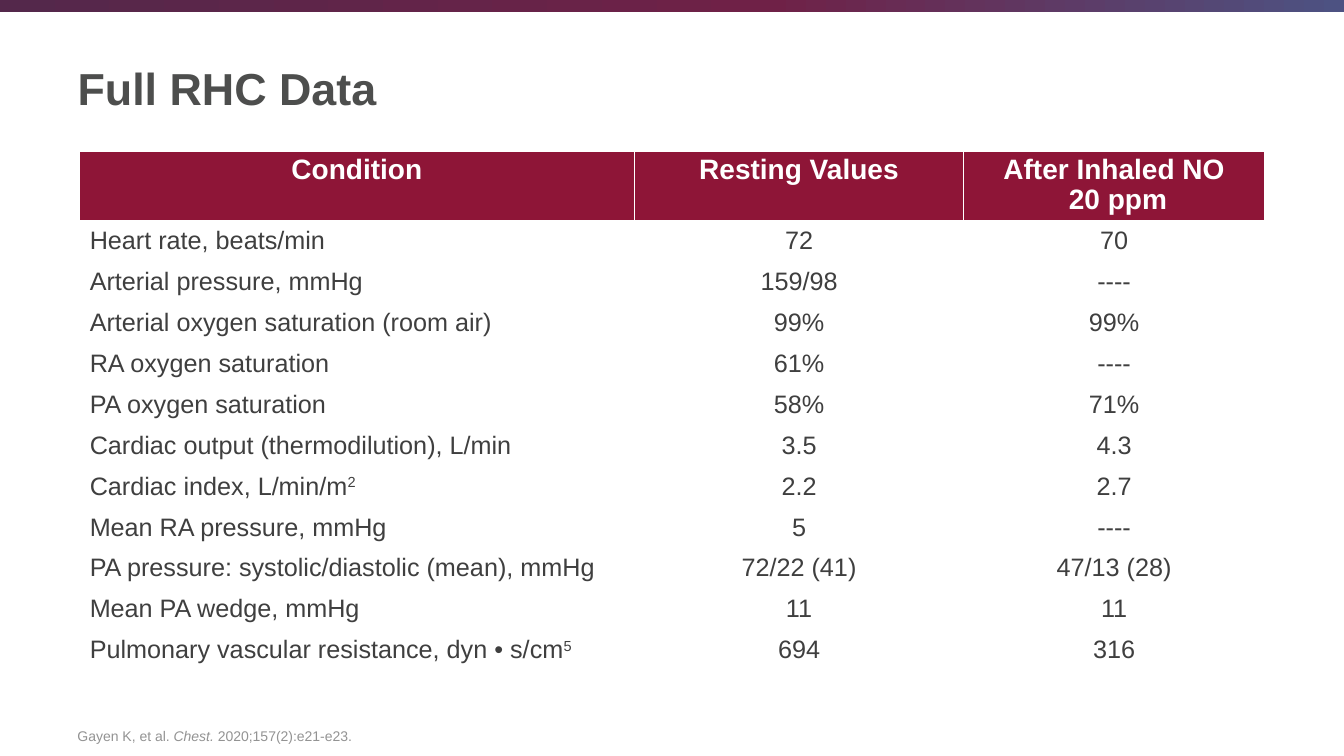
from copy import deepcopy
from dataclasses import dataclass

from pptx import Presentation
from pptx.dml.color import RGBColor
from pptx.enum.shapes import MSO_SHAPE
from pptx.enum.text import MSO_ANCHOR as ANCHOR, PP_ALIGN as ALIGN
from pptx.oxml import parse_xml
from pptx.oxml.ns import nsdecls
from pptx.util import Inches, Pt

WHITE = "FFFFFF"
CRIMSON = "8E1537"
TITLE = dict(size=Pt(32), bold=True, name="Arial", color="4D4E4D")
HEAD = dict(size=Pt(20), bold=True, name="Arial", color=WHITE)
BODY = dict(size=Pt(18), bold=False, name="Arial", color="3F3F3F")
CITE = dict(size=Pt(10), name="Arial", color="939393")
BAR_STOPS = [(0, "54284B"), (0.57, "6F2147"), (1, "4D5282")]
COLUMN_WIDTHS = [5.5, 3.27, 2.98]
HEAD_HEIGHT, ROW_HEIGHT = 0.7, 0.406


@dataclass
class Reading:
    label: str
    resting: str
    after: str
    power: str = ""


HEADINGS = ["Condition", "Resting Values", "After Inhaled NO\n 20 ppm"]
READINGS = [
    Reading("Heart rate, beats/min", "72", "70"),
    Reading("Arterial pressure, mmHg", "159/98", "----"),
    Reading("Arterial oxygen saturation (room air)", "99%", "99%"),
    Reading("RA oxygen saturation", "61%", "----"),
    Reading("PA oxygen saturation", "58%", "71%"),
    Reading("Cardiac output (thermodilution), L/min", "3.5", "4.3"),
    Reading("Cardiac index, L/min/m", "2.2", "2.7", "2"),
    Reading("Mean RA pressure, mmHg", "5", "----"),
    Reading("PA pressure: systolic/diastolic (mean), mmHg", "72/22 (41)", "47/13 (28)"),
    Reading("Mean PA wedge, mmHg", "11", "11"),
    Reading("Pulmonary vascular resistance, dyn • s/cm", "694", "316", "5"),
]


def rgb(value: str) -> RGBColor:
    return RGBColor.from_string(value)


def add_run(p, text: str, look: dict):
    r = p.add_run()
    r.text = text
    for key, value in look.items():
        if key == "color":
            r.font.color.rgb = rgb(value)
        else:
            setattr(r.font, key, value)
    return r


def place(sp, left: float, top: float, width: float, height: float) -> None:
    sp.left, sp.top = Inches(left), Inches(top)
    sp.width, sp.height = Inches(width), Inches(height)


def add_bar(s) -> None:
    sp = s.shapes.add_shape(MSO_SHAPE.RECTANGLE, 0, 0, Inches(13.33), Inches(0.12))
    sp.shadow.inherit = False
    sp.line.fill.background()
    sp.fill.gradient()
    sp.fill.gradient_angle = 0
    gs_list = sp.fill._fill._gradFill.gsLst
    gs_list.append(deepcopy(gs_list[-1]))
    for stop, (position, color) in zip(sp.fill.gradient_stops, BAR_STOPS):
        stop.position = position
        stop.color.rgb = rgb(color)


def set_borders(cell, bottom: float) -> None:
    tc_pr = cell._tc.get_or_add_tcPr()
    for side, points in zip("LRTB", (1, 1, 1, bottom)):
        tc_pr.append(parse_xml(
            f'<a:ln{side} {nsdecls("a")} w="{Pt(points)}"><a:solidFill>'
            f'<a:srgbClr val="{WHITE}"/></a:solidFill></a:ln{side}>'))


def fill_heading(cell, text: str) -> None:
    set_borders(cell, 3)
    cell.fill.solid()
    cell.fill.fore_color.rgb = rgb(CRIMSON)
    tf = cell.text_frame
    for i, line in enumerate(text.split("\n")):
        p = tf.add_paragraph() if i else tf.paragraphs[0]
        p.alignment = ALIGN.CENTER
        p.line_spacing = 0.95
        add_run(p, line, HEAD)


def fill_value(cell, text: str, align: ALIGN, power: str = "") -> None:
    set_borders(cell, 1)
    cell.fill.background()
    p = cell.text_frame.paragraphs[0]
    p.alignment = align
    add_run(p, text, BODY)
    if power:
        r = add_run(p, power, BODY)
        r.font._element.set("baseline", "30000")


def add_readings(s) -> None:
    height = HEAD_HEIGHT + ROW_HEIGHT * len(READINGS)
    table = s.shapes.add_table(
        len(READINGS) + 1, len(HEADINGS), Inches(0.79), Inches(1.5),
        Inches(sum(COLUMN_WIDTHS)), Inches(height)).table
    table.horz_banding = False
    for column, width in zip(table.columns, COLUMN_WIDTHS):
        column.width = Inches(width)
    for i, row in enumerate(table.rows):
        row.height = Inches(ROW_HEIGHT if i else HEAD_HEIGHT)
    for i, heading in enumerate(HEADINGS):
        fill_heading(table.cell(0, i), heading)
    for i, reading in enumerate(READINGS, 1):
        fill_value(table.cell(i, 0), reading.label, ALIGN.LEFT, reading.power)
        fill_value(table.cell(i, 1), reading.resting, ALIGN.CENTER)
        fill_value(table.cell(i, 2), reading.after, ALIGN.CENTER)


def add_citation(s) -> None:
    tf = s.shapes.add_textbox(
        Inches(0.67), Inches(6.95), Inches(11.75), Inches(0.48)).text_frame
    tf.word_wrap = True
    tf.vertical_anchor = ANCHOR.BOTTOM
    p = tf.paragraphs[0]
    add_run(p, "Gayen K, et al. ", CITE)
    add_run(p, "Chest. ", CITE | {"italic": True})
    add_run(p, "2020;157(2):e21-e23.", CITE)


def main() -> None:
    prs = Presentation()
    prs.slide_width, prs.slide_height = Inches(13.33), Inches(7.5)
    s = prs.slides.add_slide(prs.slide_layouts[5])
    add_bar(s)
    title = s.shapes.title
    place(title, 0.67, 0.22, 11.75, 1.3)
    title.text_frame.vertical_anchor = ANCHOR.MIDDLE
    p = title.text_frame.paragraphs[0]
    p.alignment = ALIGN.LEFT
    add_run(p, "Full RHC Data", TITLE)
    add_readings(s)
    add_citation(s)
    prs.save("out.pptx")


if __name__ == "__main__":
    main()
